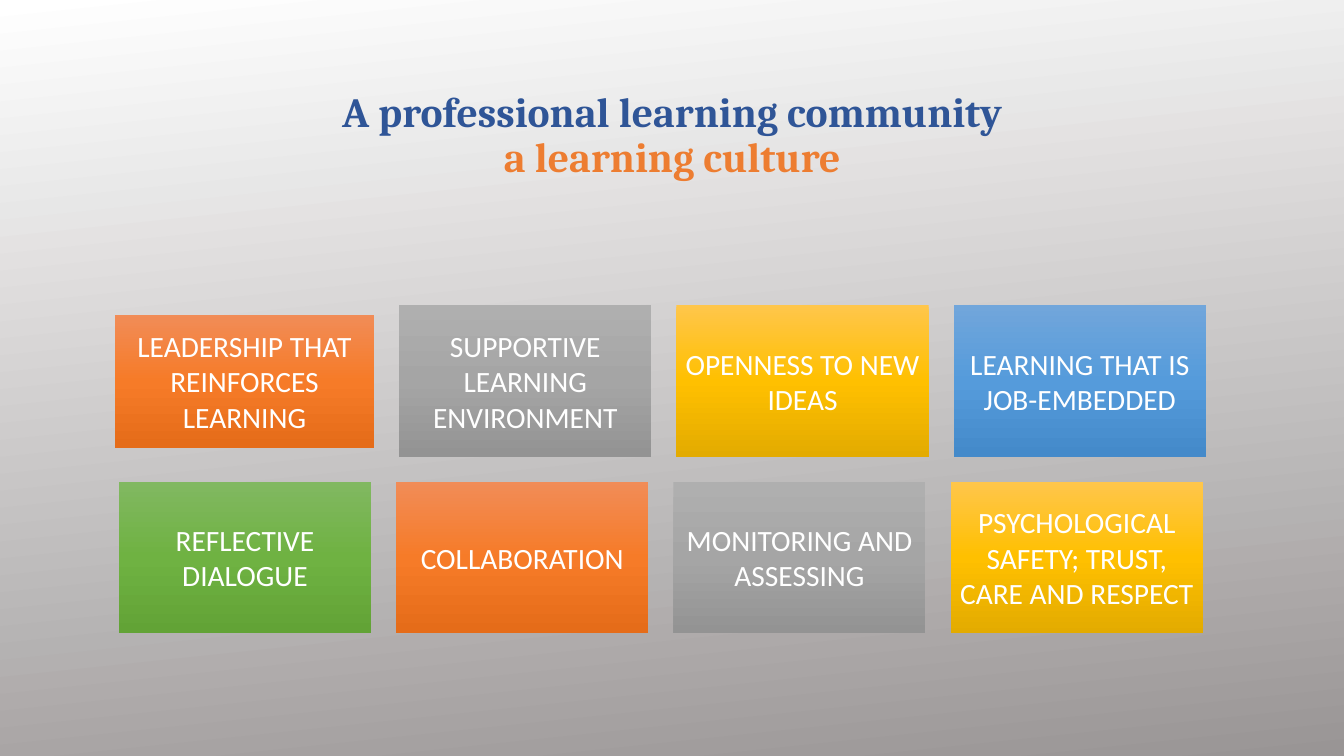
import copy
from dataclasses import dataclass

import pptx
import pptx.util
from pptx.dml.color import RGBColor
from pptx.enum.shapes import MSO_SHAPE
from pptx.enum.text import MSO_ANCHOR, MSO_AUTO_SIZE, PP_ALIGN
from pptx.oxml.ns import qn
from pptx.util import Inches


@dataclass(frozen=True)
class Theme:
    background: tuple = ("FFFFFF", "999595")
    orange: tuple = ("F18C57", "F67B28", "E56C19")
    gray: tuple = ("AFAFAF", "A5A5A5", "939393")
    gold: tuple = ("FFC64B", "FFC000", "E3AB00")
    blue: tuple = ("71A6DB", "559BDB", "448ACA")
    green: tuple = ("81B861", "6FB242", "62A336")
    title_colors: tuple = ("2F5597", "ED7D31")
    card_text: str = "FFFFFF"
    title_font: str = "Cambria"
    card_font: str = "Calibri"
    title_size: float = 29.7
    card_size: float = 21


theme = Theme()


def paint_gradient(fill, colors, clockwise_angle):
    """Fill with evenly spaced colour stops."""
    fill.gradient()
    fill.gradient_angle = 360 - clockwise_angle
    stops = fill.gradient_stops
    for position, color in enumerate(colors):
        stops[position].position = position / (len(colors) - 1)
        stops[position].color.rgb = RGBColor.from_string(color)


def style_span(span, font, size, color):
    span.font.name = font
    span.font.size = pptx.util.Pt(size)
    span.font.color.rgb = RGBColor.from_string(color)


deck = pptx.Presentation()
deck.slide_width = Inches(13.33)
deck.slide_height = Inches(7.5)
page = deck.slides.add_slide(deck.slide_layouts[5])
paint_gradient(page.background.fill, theme.background, 84)

# Title
title = page.shapes.title
title.left, title.top = Inches(0.92), Inches(0.4)
title.width, title.height = Inches(11.5), Inches(1.45)
frame = title.text_frame
frame.text = "A professional learning community\va learning culture"
frame.word_wrap = True
frame.auto_size = MSO_AUTO_SIZE.NONE
frame.vertical_anchor = MSO_ANCHOR.BOTTOM
para = frame.paragraphs[0]
para.alignment = PP_ALIGN.CENTER
para.line_spacing = 0.9
for span, color in zip(para.runs, theme.title_colors):
    style_span(span, theme.title_font, theme.title_size, color)
    span.font.bold = True

# Cards: the first one is wider and lower than the grid cell it stands in
card_width, card_height, column_pitch = 2.5, 1.5, 2.75
first_card = (1.14, 3.12, 2.57, 1.32)
rows = [
    (1.21, 3.03, [
        ("LEADERSHIP THAT REINFORCES LEARNING", theme.orange),
        ("SUPPORTIVE LEARNING ENVIRONMENT", theme.gray),
        ("OPENNESS TO NEW IDEAS", theme.gold),
        ("LEARNING THAT IS JOB-EMBEDDED", theme.blue),
    ]),
    (1.18, 4.78, [
        ("REFLECTIVE DIALOGUE", theme.green),
        ("COLLABORATION", theme.orange),
        ("MONITORING AND ASSESSING", theme.gray),
        ("PSYCHOLOGICAL SAFETY; TRUST, CARE AND RESPECT", theme.gold),
    ]),
]
for row, (left, top, cards) in enumerate(rows):
    for column, (label, colors) in enumerate(cards):
        bounds = (left + column * column_pitch, top, card_width, card_height)
        if row == column == 0:
            bounds = first_card
        box = page.shapes.add_shape(MSO_SHAPE.RECTANGLE, *map(Inches, bounds))
        box.shadow.inherit = False
        box.line.fill.background()
        box.fill.gradient()
        stop_list = box.element.spPr.find(qn("a:gradFill")).find(qn("a:gsLst"))
        stop_list.insert(1, copy.deepcopy(stop_list[0]))
        # Calling gradient() again keeps the three stops
        paint_gradient(box.fill, colors, 90)

        frame = box.text_frame
        frame.text = label
        frame.word_wrap = True
        frame.vertical_anchor = MSO_ANCHOR.MIDDLE
        frame.margin_left = frame.margin_right = Inches(0.09)
        frame.margin_top = frame.margin_bottom = Inches(0.09)
        para = frame.paragraphs[0]
        para.alignment = PP_ALIGN.CENTER
        style_span(para.runs[0], theme.card_font, theme.card_size, theme.card_text)

deck.save("out.pptx")
